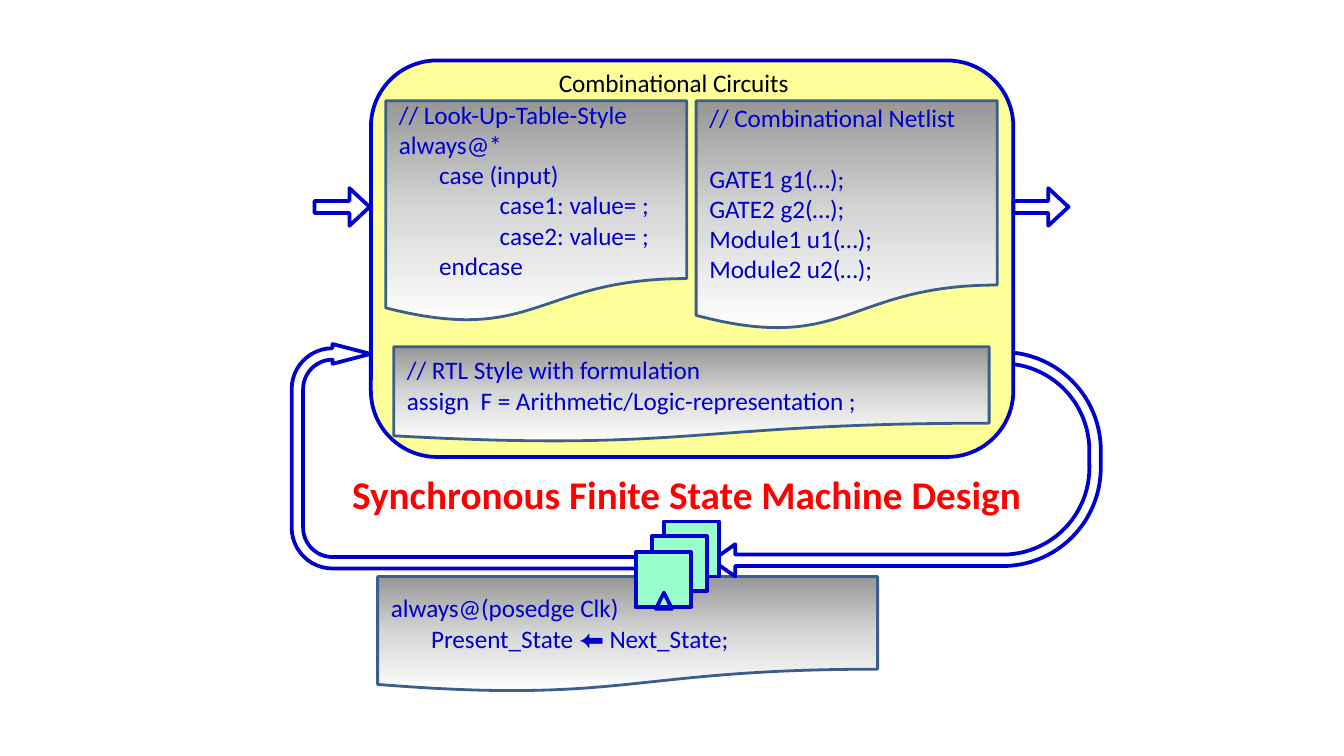
import copy

import pptx
import pptx.dml.color
import pptx.enum.shapes
import pptx.enum.text
import pptx.oxml.ns
import pptx.util

SHAPE = pptx.enum.shapes.MSO_SHAPE
ANCHOR = pptx.enum.text.MSO_ANCHOR
CELL = 0.1
COLUMNS, ROWS = 100, 56.25
BLUE, WHITE, MINT, YELLOW = "0000CC", "FFFFFF", "99FFCC", "FFFF99"
PAGE_EDGE = "3A5F8C"
PAGE_SHADES = [(0, "979797"), (0.5, "D7D7D7"), (1, WHITE)]
CODE_SIZE = 13.5
STEP, TAB = 3, 7.5


def color(code):
    """Turn a hex string into a colour."""
    return pptx.dml.color.RGBColor.from_string(code)


def grid(cells):
    """Turn a count of grid cells into a length."""
    return pptx.util.Inches(cells * CELL)


def write(frame, lines, size=CODE_SIZE, ink=BLUE, bold=False, wrap=True, anchor=ANCHOR.MIDDLE):
    """Fill a text frame with (text, indent in cells, space before in points) lines."""
    frame.word_wrap = wrap
    frame.auto_size = pptx.enum.text.MSO_AUTO_SIZE.NONE
    frame.vertical_anchor = anchor
    for number, (text, indent, gap) in enumerate(lines):
        paragraph = frame.paragraphs[0] if number == 0 else frame.add_paragraph()
        paragraph.alignment = pptx.enum.text.PP_ALIGN.LEFT
        paragraph.space_before = pptx.util.Pt(gap)
        if indent:
            paragraph._p.get_or_add_pPr().set("marL", str(grid(indent)))
        run = paragraph.add_run()
        run.text = text
        run.font.name = "Calibri"
        run.font.size = pptx.util.Pt(size)
        run.font.bold = bold
        run.font.color.rgb = color(ink)


def add_block(slide, kind, place, fill=None, edge=BLUE, weight=2, turn=0, adjust=()):
    """Add an outlined preset shape at a grid place."""
    block = slide.shapes.add_shape(kind, *map(grid, place))
    block.shadow.inherit = False
    block.rotation = turn
    for number, value in enumerate(adjust):
        block.adjustments[number] = value
    if fill:
        block.fill.solid()
        block.fill.fore_color.rgb = color(fill)
    else:
        block.fill.background()
    block.line.color.rgb = color(edge)
    block.line.width = pptx.util.Pt(weight)
    return block


def add_code_page(slide, place, lines):
    """Add a shaded document shape that holds code."""
    page = add_block(slide, SHAPE.FLOWCHART_DOCUMENT, place, edge=PAGE_EDGE, weight=1.5)
    page.fill.gradient()
    page.fill.gradient_angle = 270
    first_stop = next(page._element.spPr.iter(pptx.oxml.ns.qn("a:gs")))
    first_stop.addnext(copy.deepcopy(first_stop))
    for stop, (position, shade) in zip(page.fill.gradient_stops, PAGE_SHADES):
        stop.position = position
        stop.color.rgb = color(shade)
    write(page.text_frame, lines)


def add_registers(slide):
    """Add the stacked state registers with the clock mark."""
    for left, top in [(49.4, 38.8), (48.5, 39.9), (47.3, 41.1)]:
        add_block(slide, SHAPE.RECTANGLE, (left, top, 4.1, 4.1), MINT)
    add_block(slide, SHAPE.ISOSCELES_TRIANGLE, (48.8, 44.1, 1.2, 1.2))


def add_title(slide):
    """Place and format the slide title."""
    title = slide.shapes.title
    title.left, title.top, title.width, title.height = map(grid, (25.2, 34.5, 52.3, 4.5))
    write(title.text_frame, [("Synchronous Finite State Machine Design", 0, 0)],
          size=21, ink="FF0000", bold=True, wrap=False)


def main():
    """Build the state machine slide."""
    deck = pptx.Presentation()
    deck.slide_width, deck.slide_height = grid(COLUMNS), grid(ROWS)
    slide = deck.slides.add_slide(deck.slide_layouts[5])
    add_title(slide)

    add_code_page(slide, (28.1, 42.9, 37.2, 8.6), [
        ("always@(posedge Clk)", 0, 0),
        ("Present_State ⬅ Next_State;", STEP, 0)])
    add_block(slide, SHAPE.U_TURN_ARROW, (59.1, 20.1, 16.7, 28.9), WHITE,
              turn=90, adjust=(0.051, 0.072, 0.102, 0.438, 1))
    add_block(slide, SHAPE.ROUNDED_RECTANGLE, (27.6, 4.5, 47.8, 29.5), YELLOW)
    add_block(slide, SHAPE.U_TURN_ARROW, (27.8, 19.5, 16.7, 28.9), WHITE,
              turn=270, adjust=(0.051, 0.044, 0.169, 0.438, 0.203))
    add_registers(slide)

    heading = slide.shapes.add_textbox(*map(grid, (40.6, 4.5, 19.4, 3.3)))
    write(heading.text_frame, [("Combinational Circuits", 0, 0)],
          ink="000000", wrap=False, anchor=ANCHOR.TOP)
    add_code_page(slide, (28.7, 7.5, 22.4, 16.5), [
        ("// Look-Up-Table-Style", 0, 0),
        ("always@*", 0, 0),
        ("case (input)", STEP, 0),
        ("case1: value= ;", TAB, 0),
        ("case2: value= ;", TAB, 0),
        ("endcase", STEP, 0)])
    add_code_page(slide, (51.8, 7.5, 22.4, 17.1), [
        ("// Combinational Netlist", 0, 0),
        ("GATE1 g1(…);", 0, 16.5),
        ("GATE2 g2(…);", 0, 0),
        ("Module1 u1(…);", 0, 0),
        ("Module2 u2(…);", 0, 0)])
    add_code_page(slide, (29.3, 25.8, 44.3, 7.1), [
        ("// RTL Style with formulation", 0, 0),
        ("assign  F = Arithmetic/Logic-representation ;", 0, 0)])
    for left in (75.4, 23.4):
        add_block(slide, SHAPE.RIGHT_ARROW, (left, 14, 4.1, 2.8), WHITE, adjust=(0.322, 0.536))

    deck.save("out.pptx")


if __name__ == "__main__":
    main()
